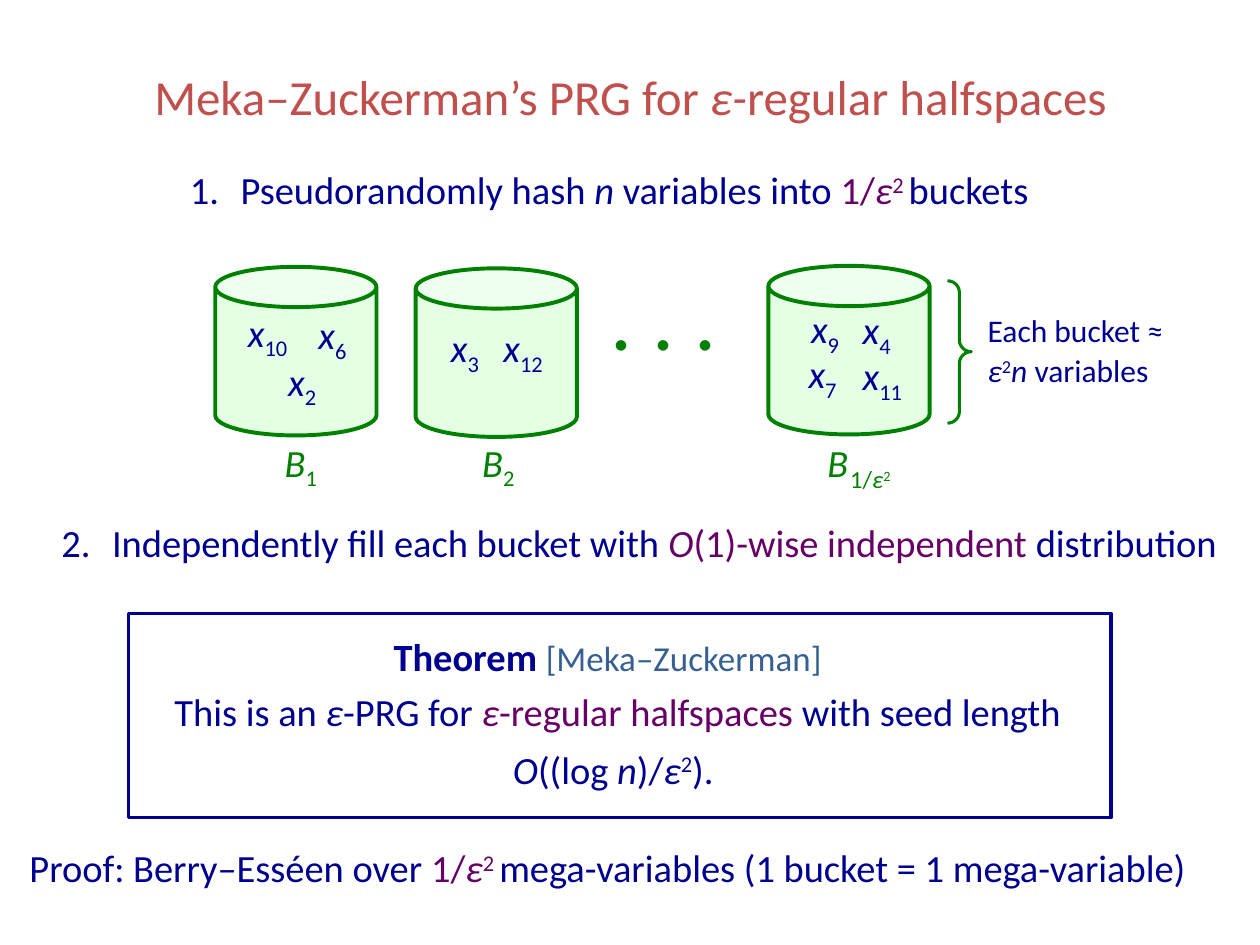
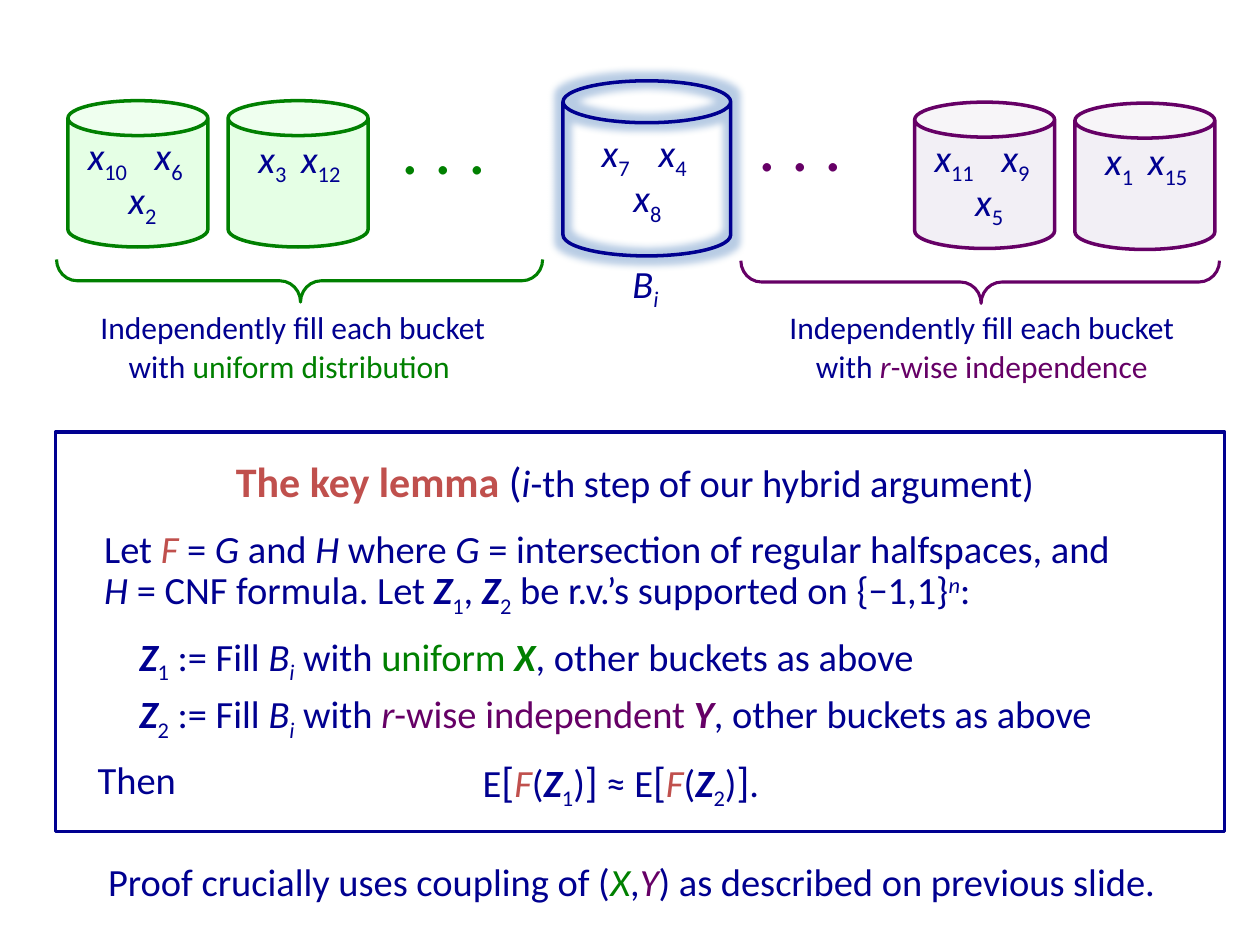
from lxml.etree import SubElement as Sub
from pptx import Presentation
from pptx.dml.color import RGBColor
from pptx.enum.shapes import MSO_SHAPE as Form
from pptx.enum.text import MSO_ANCHOR as Anchor, PP_ALIGN as Align
from pptx.oxml.ns import qn
from pptx.util import Cm, Pt

NAVY, GREEN, PLUM = "000090", "008000", "660066"
RED, STEEL, GLOW = "C0504D", "376092", "4F81BD"
MINT, LILAC = "CCFFCC", "E6E0EC"
FONT = "Calibri"

# Offsets of the variables inside a bucket
TRIO = [(0.15, 0.53), (0.97, 1.42), (1.5, 0.53)]
PAIR = [(0.36, 0.58), (1.22, 0.58)]


def rgb(code):
    return RGBColor.from_string(code)


class Pen:
    def __init__(self, deck):
        self.deck = deck
        self.slide = None

    def page(self):
        self.slide = self.deck.slides.add_slide(self.deck.slide_layouts[6])

    def box(self, x, y, w, h=1.42, top=0):
        frame = self.slide.shapes.add_textbox(Cm(x), Cm(y), Cm(w), Cm(h)).text_frame
        frame.word_wrap = True
        frame.margin_top = Cm(top)
        return frame

    def run(self, par, text, flags="", hue=NAVY, size=22):
        """Add one run; flags are b, i, ^ (superscript) and _ (subscript)."""
        run = par.add_run()
        run.text = text
        font = run.font
        font.name, font.size = FONT, Pt(size)
        font.color.rgb = rgb(hue)
        font.bold, font.italic = "b" in flags, "i" in flags
        for mark, shift in (("^", "30000"), ("_", "-25000")):
            if mark in flags:
                run._r.get_or_add_rPr().set("baseline", shift)

    def para(self, frame, *runs, lead=33, after=9, left=0, mid=False, num=0):
        """Add a paragraph of run tuples; num above 0 gives it that number."""
        par = frame.paragraphs[0]
        if par.runs:
            par = frame.add_paragraph()
        par.alignment = Align.CENTER if mid else Align.LEFT
        par.line_spacing, par.space_after = Pt(lead), Pt(after)
        props = par._p.get_or_add_pPr()
        props.set("marL", str(Cm(left)))
        if num:
            props.set("indent", str(Cm(-1.02)))
            Sub(Sub(props, qn("a:buClr")), qn("a:srgbClr"), val=NAVY)
            Sub(props, qn("a:buAutoNum"), type="arabicPeriod", startAt=str(num))
        for run in runs:
            self.run(par, *run)
        return par

    def title(self, *runs):
        frame = self.box(0.05, -0.36, 25.32, 4.39, top=0.13)
        frame.vertical_anchor = Anchor.MIDDLE
        self.para(frame, *runs, lead=38.6, after=0, mid=True)

    def step(self, num, x, y, w, *runs):
        self.para(self.box(x, y, w, 2.31), *runs, left=1.27, num=num)

    def line(self, x, y, w, *runs, mid=False):
        """Add a paragraph in the tight spacing of the lemma."""
        self.para(self.box(x, y, w, 1.22, top=0.13), *runs,
                  lead=27, left=0.25, mid=mid)

    def dots(self, x, y, hue, size):
        self.para(self.box(x, y, 3.99), (". . .", "", hue, size), mid=True)

    def sym(self, x, y, name, low, hue=NAVY, flags="_"):
        """Add an italic letter with a subscript."""
        self.para(self.box(x, y, 1.7), (name, "i", hue), (low, flags, hue))

    def shape(self, form, x, y, w, h, hue, width, fill=None):
        shape = self.slide.shapes.add_shape(form, Cm(x), Cm(y), Cm(w), Cm(h))
        shape.shadow.inherit = False
        if fill:
            shape.fill.solid()
            shape.fill.fore_color.rgb = rgb(fill)
            tint = next(shape._element.iter(qn("a:srgbClr")))
            Sub(tint, qn("a:alpha"), val="50000")
        else:
            shape.fill.background()
        shape.line.color.rgb = rgb(hue)
        shape.line.width = Pt(width)
        return shape

    def frame(self, x, y, w, h):
        self.shape(Form.RECTANGLE, x, y, w, h, NAVY, 2)

    def bucket(self, x, y, lows, spots, hue=GREEN, fill=MINT,
               w=2.82, h=2.95, width=2):
        """Add a can that holds one variable x per subscript in lows."""
        can = self.shape(Form.CAN, x, y, w, h, hue, width, fill)
        for low, (dx, dy) in zip(lows, spots):
            self.sym(x + dx, y + dy, "x", str(low))
        return can

    def brace(self, x, y, w, h, turn, hue):
        brace = self.shape(Form.LEFT_BRACE, x, y, w, h, hue, 1.75)
        brace.adjustments[0], brace.adjustments[1] = 0.485, 0.502
        brace.rotation = turn

    def glow(self, shape):
        effects = next(shape._element.iter(qn("a:effectLst")))
        halo = Sub(effects, qn("a:glow"), rad=str(Pt(8)))
        tint = Sub(halo, qn("a:srgbClr"), val=GLOW)
        Sub(tint, qn("a:alpha"), val="40000")


def hash_page(pen):
    pen.page()
    pen.title(("Meka–Zuckerman’s PRG for ", "", RED, 28), ("ε-", "i", RED, 28),
              ("regular halfspaces", "", RED, 28))
    count = [("1/", "", PLUM), ("ε", "i", PLUM), ("2 ", "^", PLUM)]
    pen.step(1, 3.33, 3.12, 18.26, ("Pseudorandomly hash ",), ("n", "i"),
             (" variables into ",), *count, ("buckets",))
    pen.step(2, 0.74, 10.24, 24.87, ("Independently fill each bucket with ",),
             ("O", "i", PLUM), ("(1)-wise independent ", "", PLUM),
             ("distribution",))

    big = dict(w=3.25, h=3.4, width=2.25)
    pen.bucket(4.34, 5.38, (10, 2, 6),
               [(0.41, 0.74), (1.22, 1.73), (1.83, 0.79)], **big)
    pen.bucket(8.38, 5.41, (3, 12), [(0.46, 1.02), (1.52, 1.02)], **big)
    pen.bucket(15.49, 5.36, (9, 11, 4, 7),
               [(0.61, 0.69), (1.65, 1.63), (1.65, 0.71), (0.56, 1.6)], **big)
    pen.dots(11.38, 6.25, GREEN, 50)
    pen.sym(5.49, 8.74, "B", "1", GREEN)
    pen.sym(9.47, 8.74, "B", "2", GREEN)
    pen.para(pen.box(16.43, 8.61, 1.37), ("B", "i", GREEN))
    pen.para(pen.box(16.89, 8.79, 1.93), ("1/", "", GREEN, 14),
             ("ε", "i", GREEN, 14), ("2", "^", GREEN, 14))
    pen.brace(19.1, 5.66, 0.48, 2.87, 180, GREEN)
    pen.para(pen.box(19.41, 6.22, 4.57, 2.31), ("Each bucket ≈ ", "", NAVY, 18),
             ("ε", "i", NAVY, 18), ("2", "^", NAVY, 18), ("n ", "i", NAVY, 18),
             ("variables", "", NAVY, 18), lead=23, after=3, left=0.25)

    pen.frame(2.59, 12.37, 19.81, 4.11)
    pen.para(pen.box(6.68, 12.52, 11.3, 1.6), ("Theorem ", "b"),
             ("[Meka–Zuckerman] ", "", STEEL, 20), mid=True)
    claim = pen.box(1.91, 13.74, 21.08, 2.79)
    pen.para(claim, ("This is an ",), ("ε", "i"), ("-PRG for ",),
             ("ε", "i", PLUM), ("-regular halfspaces ", "", PLUM),
             ("with seed length",), lead=30, after=0, mid=True)
    pen.para(claim, ("O", "i"), ("((log ",), ("n", "i"), (")/",), ("ε", "i"),
             ("2", "^"), ("). ",), mid=True)
    pen.para(pen.box(0.05, 16.79, 24.4, 2.31), ("Proof: Berry–Esséen over ",),
             *count, ("mega-variables (1 bucket = 1 mega-variable)",), mid=True)


def lemma_page(pen):
    pen.page()
    pen.bucket(1.37, 2.03, (10, 2, 6), TRIO)
    pen.bucket(4.6, 2.03, (3, 12), PAIR)
    pen.bucket(18.44, 2.06, (11, 5, 9), TRIO, PLUM, LILAC)
    pen.bucket(21.67, 2.08, (1, 15), PAIR, PLUM, LILAC)
    pen.glow(pen.bucket(11.35, 1.63, (8, 7, 4),
                        [(1.17, 1.78), (0.53, 0.86), (1.68, 0.86)],
                        NAVY, None, 3.38, 3.53))
    pen.sym(12.5, 5.13, "B", "i", flags="i_")
    pen.dots(6.95, 2.64, GREEN, 40)
    pen.dots(14.14, 2.57, PLUM, 40)
    pen.brace(5.61, 0.76, 0.86, 9.8, 270, GREEN)
    pen.brace(19.33, 0.86, 0.86, 9.65, 270, PLUM)
    fills = [
        (1.22, [("uniform distribution ", "", GREEN, 18)]),
        (15.11, [("r", "i", PLUM, 18), ("-wise independence", "", PLUM, 18)]),
    ]
    for x, kind in fills:
        pen.para(pen.box(x, 6.2, 9.37),
                 ("Independently fill each bucket with ", "", NAVY, 18),
                 *kind, lead=22, mid=True)

    pen.frame(1.12, 8.71, 23.57, 8.05)
    pen.para(pen.box(2.87, 9.35, 20.04, 1.63), ("The key lemma ", "b", RED, 24),
             ("(", "", NAVY, 24), ("i", "i"),
             ("-th step of our hybrid argument) ",), lead=24, after=0, mid=True)
    one = [("Z", "bi"), ("1", "_")]
    two = [("Z", "bi"), ("2", "_")]
    pen.line(1.6, 10.44, 21.44, ("Let ",), ("F", "i", RED), (" = ",), ("G", "i"),
             (" and ",), ("H", "i"), (" where ",), ("G ", "i"),
             ("= intersection of regular halfspaces, and ",), ("H ", "i"),
             ("= CNF formula. Let ",), *one, (", ",), *two,
             (" be r.v.’s supported on {−1,1}",), ("n", "i^"), (":",))
    cases = pen.box(2.31, 12.73, 22.15, 2.39, top=0.13)
    laws = [
        (one, [("uniform ", "", GREEN), ("X", "bi", GREEN)], 6),
        (two, [("r", "i", PLUM), ("-wise independent ", "", PLUM),
               ("Y", "bi", PLUM)], 9),
    ]
    for name, law, after in laws:
        pen.para(cases, *name, (" := Fill ",), ("B", "i"), ("i", "i_"),
                 (" with ",), *law, (", other buckets as above",),
                 lead=27, after=after, left=0.25)

    def mean(name):
        return [("E",), ("[", "", NAVY, 24), ("F", "i", RED), ("(",), *name,
                (")",), ("]", "", NAVY, 24)]

    pen.line(9.19, 15.27, 6.58, *mean(one), (" ≈ ",), *mean(two), (". ",), mid=True)
    pen.line(1.47, 15.09, 21.82, ("Then",))
    pen.line(1.68, 17.15, 22.78, ("Proof crucially uses coupling of (",),
             ("X", "i", GREEN), (",",), ("Y", "i", PLUM),
             (") as described on previous slide.",))


def main():
    deck = Presentation()
    deck.slide_width, deck.slide_height = Cm(25.4), Cm(19.05)
    pen = Pen(deck)
    hash_page(pen)
    lemma_page(pen)
    deck.save("out.pptx")


if __name__ == "__main__":
    main()
